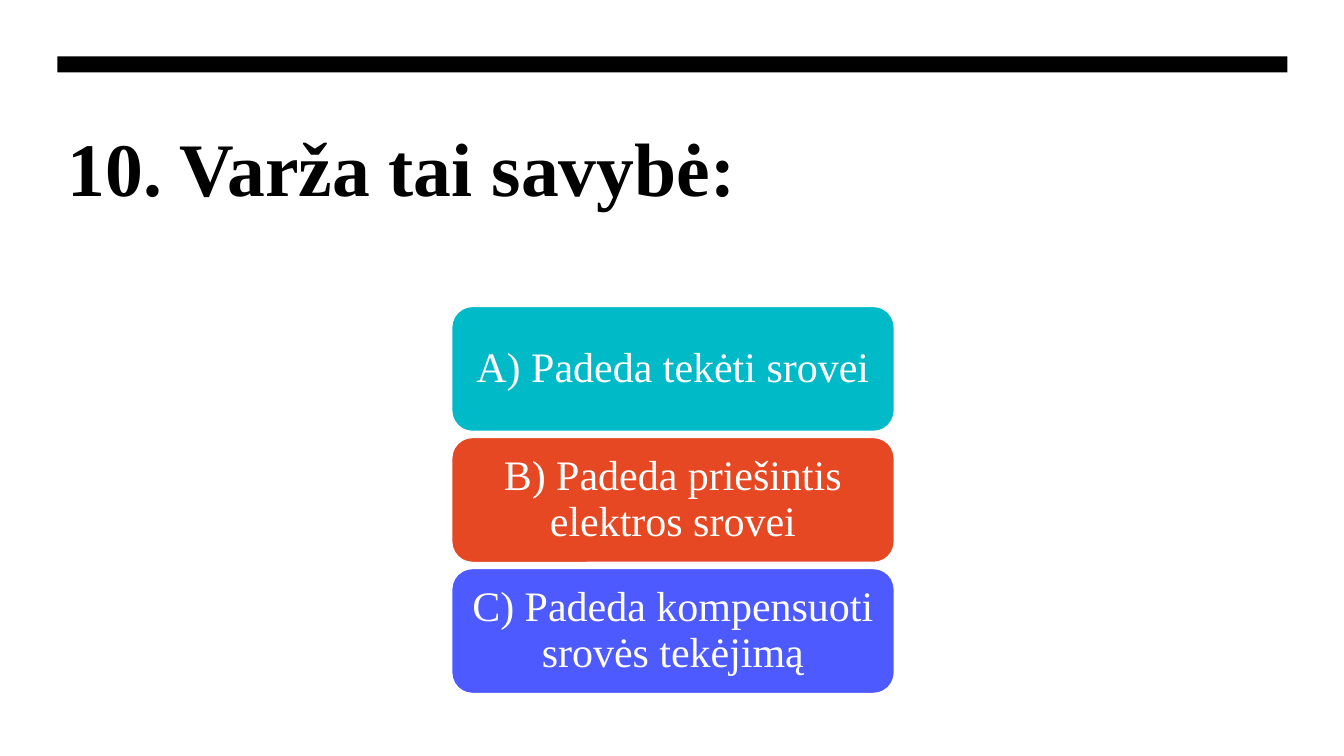
from dataclasses import dataclass

from pptx import Presentation
from pptx import util as u
from pptx.dml import color
from pptx.enum import shapes, text


@dataclass(frozen=True)
class Theme:
    font: str = "Times New Roman"
    paper: str = "FFFFFF"
    ink: str = "000000"
    answers: tuple = ("00BAC8", "E64823", "4D5AFF")
    title_size: int = 54
    answer_size: int = 30


class QuizSlide:
    def __init__(self, deck, theme):
        self.theme = theme
        self.slide = deck.slides.add_slide(deck.slide_layouts[5])
        self.paint(self.slide.background.fill, theme.paper)

    def paint(self, fill, shade):
        fill.solid()
        fill.fore_color.rgb = color.RGBColor.from_string(shade)

    def set_text(self, frame, wording, size, shade, align, bold=False):
        frame.word_wrap = True
        frame.auto_size = text.MSO_AUTO_SIZE.NONE
        frame.text = wording
        paragraph = frame.paragraphs[0]
        paragraph.alignment = align
        paragraph.font.name = self.theme.font
        paragraph.font.size = u.Pt(size)
        paragraph.font.bold = bold
        paragraph.font.color.rgb = color.RGBColor.from_string(shade)
        return paragraph

    def question(self, wording, left, top, width, height):
        title = self.slide.shapes.title
        title.left, title.top = u.Inches(left), u.Inches(top)
        title.width, title.height = u.Inches(width), u.Inches(height)
        frame = title.text_frame
        frame.vertical_anchor = text.MSO_ANCHOR.TOP
        frame.margin_top = u.Inches(0.13)
        self.set_text(frame, wording, self.theme.title_size, self.theme.ink,
                      text.PP_ALIGN.LEFT, bold=True)

    def block(self, kind, shade, left, top, width, height):
        block = self.slide.shapes.add_shape(
            kind, u.Inches(left), u.Inches(top), u.Inches(width), u.Inches(height))
        block.shadow.inherit = False
        self.paint(block.fill, shade)
        block.line.fill.background()
        return block

    def bar(self, left, top, width, height):
        self.block(shapes.MSO_SHAPE.RECTANGLE, self.theme.ink, left, top, width, height)

    def answer(self, wording, shade, left, top, width, height):
        card = self.block(shapes.MSO_SHAPE.ROUNDED_RECTANGLE, shade,
                          left, top, width, height)
        self.paint(card.line.fill, self.theme.paper)
        card.line.width = u.Pt(1)
        frame = card.text_frame
        frame.vertical_anchor = text.MSO_ANCHOR.MIDDLE
        frame.margin_left = frame.margin_right = u.Inches(0.12)
        frame.margin_top = frame.margin_bottom = u.Inches(0.06)
        paragraph = self.set_text(frame, wording, self.theme.answer_size,
                                  self.theme.paper, text.PP_ALIGN.CENTER)
        paragraph.line_spacing = 0.9


def main():
    deck = Presentation()
    deck.slide_width, deck.slide_height = u.Inches(13.33), u.Inches(7.5)
    theme = Theme()
    quiz = QuizSlide(deck, theme)
    quiz.question("10. Varža tai savybė:", 0.57, 1.07, 12.2, 1.79)
    quiz.bar(0.57, 0.56, 12.2, 0.16)

    answers = (
        "A) Padeda tekėti srovei",
        "B) Padeda priešintis elektros srovei",
        "C) Padeda kompensuoti srovės tekėjimą",
    )
    first_top, pitch = 3.04, 1.3
    for row, (wording, shade) in enumerate(zip(answers, theme.answers)):
        quiz.answer(wording, shade, 4.48, first_top + row * pitch, 4.39, 1.24)
    deck.save("out.pptx")


if __name__ == "__main__":
    main()
